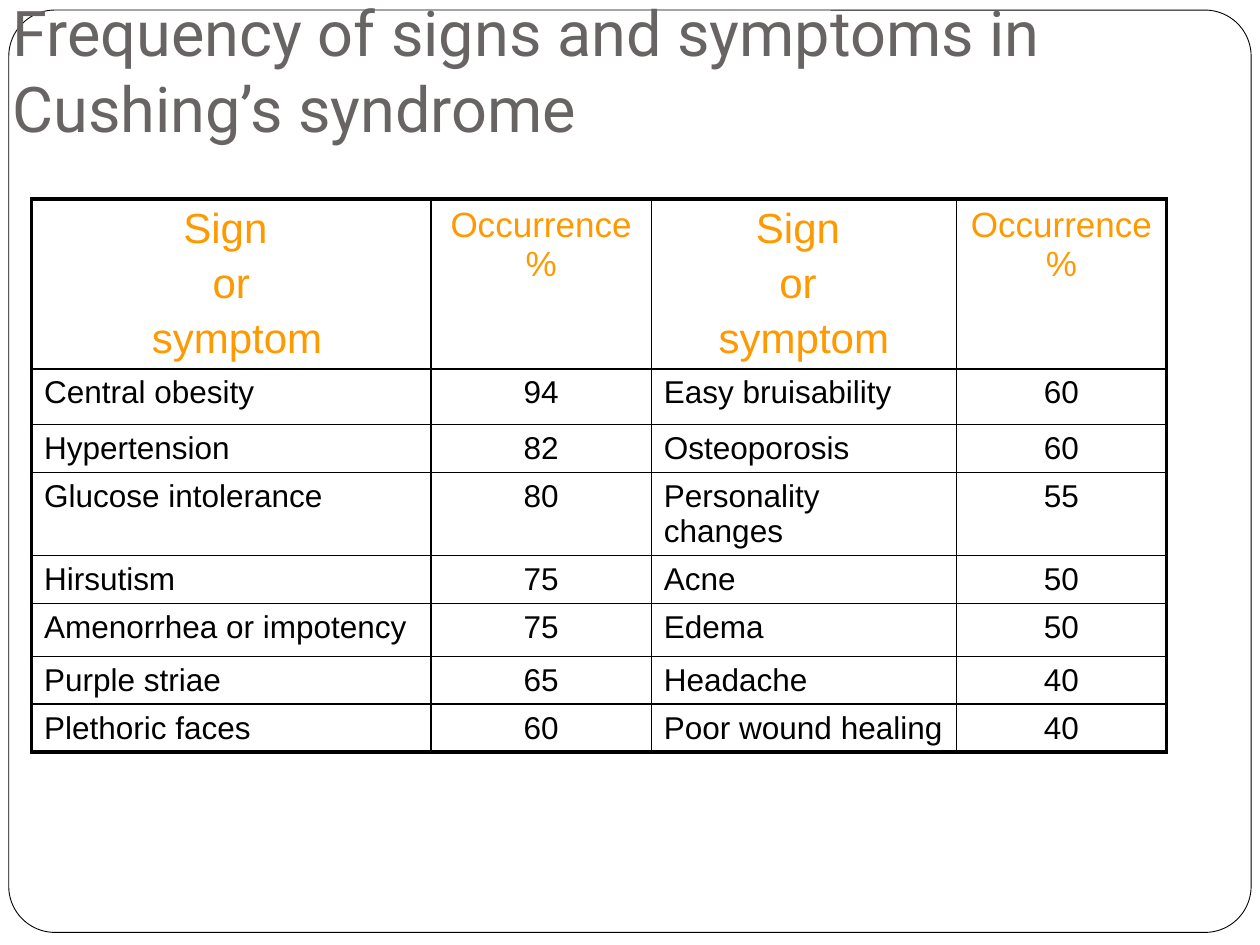
from dataclasses import dataclass

from lxml.etree import SubElement
from pptx import Presentation
from pptx.dml.color import RGBColor
from pptx.enum.shapes import MSO_SHAPE
from pptx.enum.text import MSO_ANCHOR, MSO_AUTO_SIZE, PP_ALIGN
from pptx.oxml.ns import qn
from pptx.util import Inches, Pt


@dataclass(frozen=True)
class Theme:
    paper: RGBColor = RGBColor(0xFF, 0xFF, 0xFF)
    ink: RGBColor = RGBColor(0, 0, 0)
    title: RGBColor = RGBColor(0x69, 0x64, 0x64)
    heading: RGBColor = RGBColor(0xFF, 0x99, 0x00)
    title_font: str = "Roboto"
    table_font: str = "Arial"
    title_size: float = 36
    sign_heading_size: float = 24
    occurrence_heading_size: float = 20
    body_size: float = 18
    frame_line: float = 0.5
    inner_line: float = 1
    outer_line: float = 2.25


THEME = Theme()

TITLE = "Frequency of signs and symptoms in Cushing’s syndrome"
HEADINGS = ("Sign \nor\n symptom", "Occurrence %", "Sign \nor \nsymptom", "Occurrence %")
FREQUENCIES = [
    ("Central obesity", 94, "Easy bruisability", 60),
    ("Hypertension", 82, "Osteoporosis", 60),
    ("Glucose intolerance", 80, "Personality changes", 55),
    ("Hirsutism", 75, "Acne", 50),
    ("Amenorrhea or impotency", 75, "Edema", 50),
    ("Purple striae", 65, "Headache", 40),
    ("Plethoric faces", 60, "Poor wound healing", 40),
]
COLUMN_WIDTHS = (3.17, 1.75, 2.42, 1.67)
ROW_HEIGHTS = (1.34, 0.44, 0.38, 0.66, 0.38, 0.42, 0.38, 0.38)


def style_run(run, font, size, color):
    run.font.name = font
    run.font.size = Pt(size)
    run.font.color.rgb = color


def add_frame(slide, left, top, width, height):
    """Draw the rounded page border behind everything else."""
    frame = slide.shapes.add_shape(MSO_SHAPE.ROUNDED_RECTANGLE, left, top, width, height)
    frame.adjustments[0] = 0.05
    frame.shadow.inherit = False
    frame.fill.solid()
    frame.fill.fore_color.rgb = THEME.paper
    frame.line.color.rgb = THEME.ink
    frame.line.width = Pt(THEME.frame_line)
    slide.shapes.element.insert(2, frame.element)


def place_title(slide, left, top, width, height):
    title = slide.shapes.title
    title.left, title.top, title.width, title.height = left, top, width, height
    text = title.text_frame
    text.text = TITLE
    text.word_wrap = True
    text.auto_size = MSO_AUTO_SIZE.NONE
    text.vertical_anchor = MSO_ANCHOR.BOTTOM
    text.margin_left = text.margin_right = text.margin_bottom = Inches(0.1)
    text.margin_top = Inches(0.05)
    heading = text.paragraphs[0]
    heading.alignment = PP_ALIGN.LEFT
    style_run(heading.runs[0], THEME.title_font, THEME.title_size, THEME.title)


def set_borders(cell, outer_sides):
    """Rule all four sides, more heavily on those at the table's edge."""
    properties = cell._tc.get_or_add_tcPr()
    for side in "LRTB":
        weight = THEME.outer_line if side in outer_sides else THEME.inner_line
        line = SubElement(properties, qn(f"a:ln{side}"), w=str(Pt(weight)))
        fill = SubElement(line, qn("a:solidFill"))
        SubElement(fill, qn("a:srgbClr"), val=str(THEME.ink))


def set_space_before(paragraph, percent):
    """Set spacing relative to the type size, which space_before cannot do."""
    spacing = SubElement(paragraph._p.get_or_add_pPr(), qn("a:spcBef"))
    SubElement(spacing, qn("a:spcPct"), val=str(percent * 1000))


def fill_cell(cell, content, size, color, alignment):
    cell.text_frame.text = str(content)
    for paragraph in cell.text_frame.paragraphs:
        paragraph.alignment = alignment
        set_space_before(paragraph, 20)
        for run in paragraph.runs:
            style_run(run, THEME.table_font, size, color)


def add_frequency_table(slide, left, top, width, height):
    rows = [HEADINGS, *FREQUENCIES]
    table = slide.shapes.add_table(
        len(rows), len(HEADINGS), left, top, width, height).table
    table.first_row = table.horz_banding = False
    for column, column_width in zip(table.columns, COLUMN_WIDTHS):
        column.width = Inches(column_width)
    for row, row_height in zip(table.rows, ROW_HEIGHTS):
        row.height = Inches(row_height)

    last_row, last_column = len(rows) - 1, len(HEADINGS) - 1
    for r, row in enumerate(rows):
        for c, content in enumerate(row):
            cell = table.cell(r, c)
            is_sign = c % 2 == 0
            if r == 0:
                size = THEME.sign_heading_size if is_sign else THEME.occurrence_heading_size
                color = THEME.heading
            else:
                size, color = THEME.body_size, THEME.ink
            alignment = PP_ALIGN.LEFT if r and is_sign else PP_ALIGN.CENTER
            fill_cell(cell, content, size, color, alignment)
            edges = {"L": c == 0, "R": c == last_column, "T": r == 0, "B": r == last_row}
            set_borders(cell, {side for side, at_edge in edges.items() if at_edge})
            cell.fill.background()


def main():
    presentation = Presentation()
    presentation.slide_width, presentation.slide_height = Inches(10), Inches(7.5)
    slide = presentation.slides.add_slide(presentation.slide_layouts[5])
    add_frame(slide, Inches(0.07), Inches(0.08), Inches(9.86), Inches(7.32))
    place_title(slide, Inches(0), Inches(0), Inches(10), Inches(1.25))
    add_frequency_table(slide, Inches(0.25), Inches(1.58),
                        Inches(sum(COLUMN_WIDTHS)), Inches(sum(ROW_HEIGHTS)))
    presentation.save("out.pptx")


if __name__ == "__main__":
    main()
